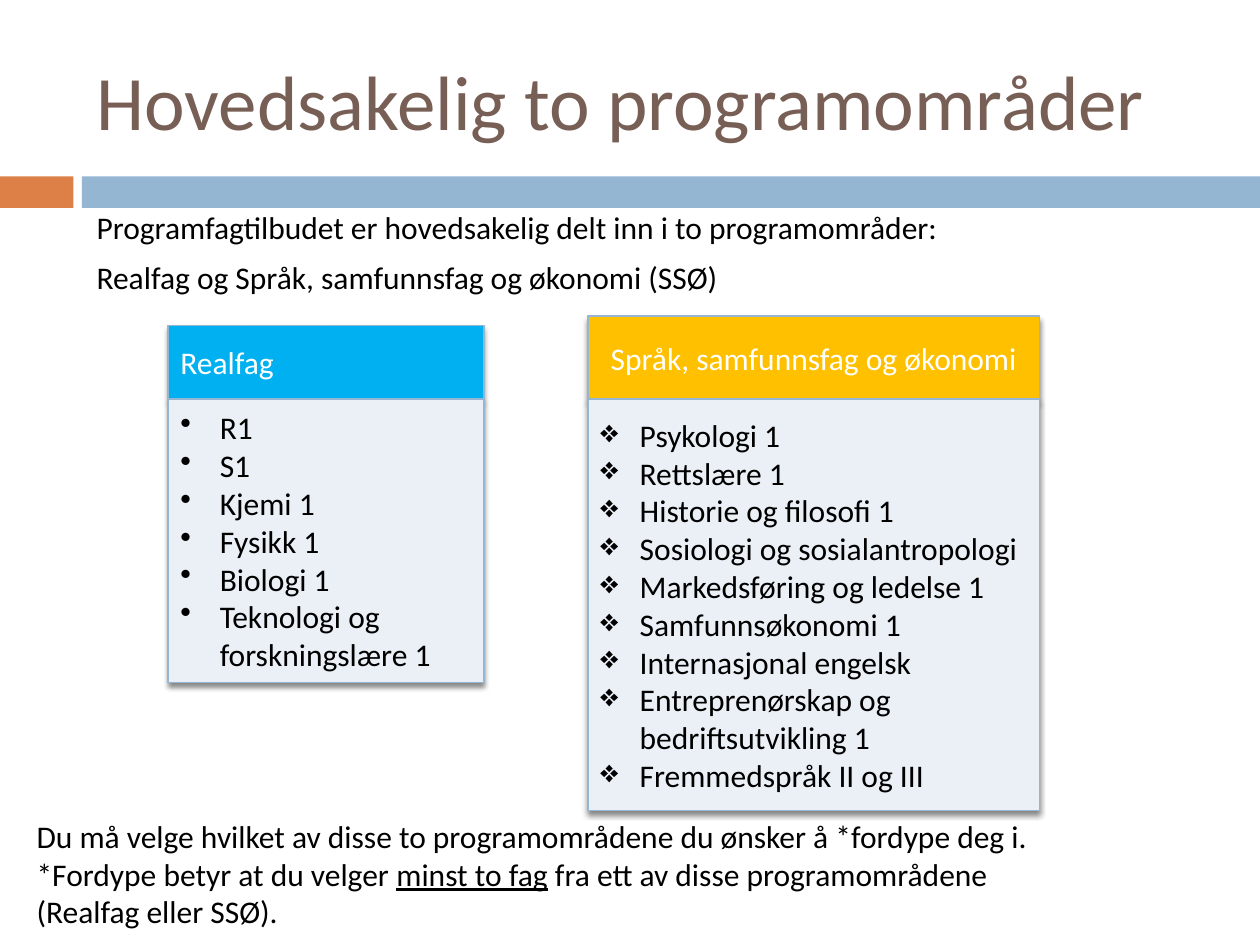
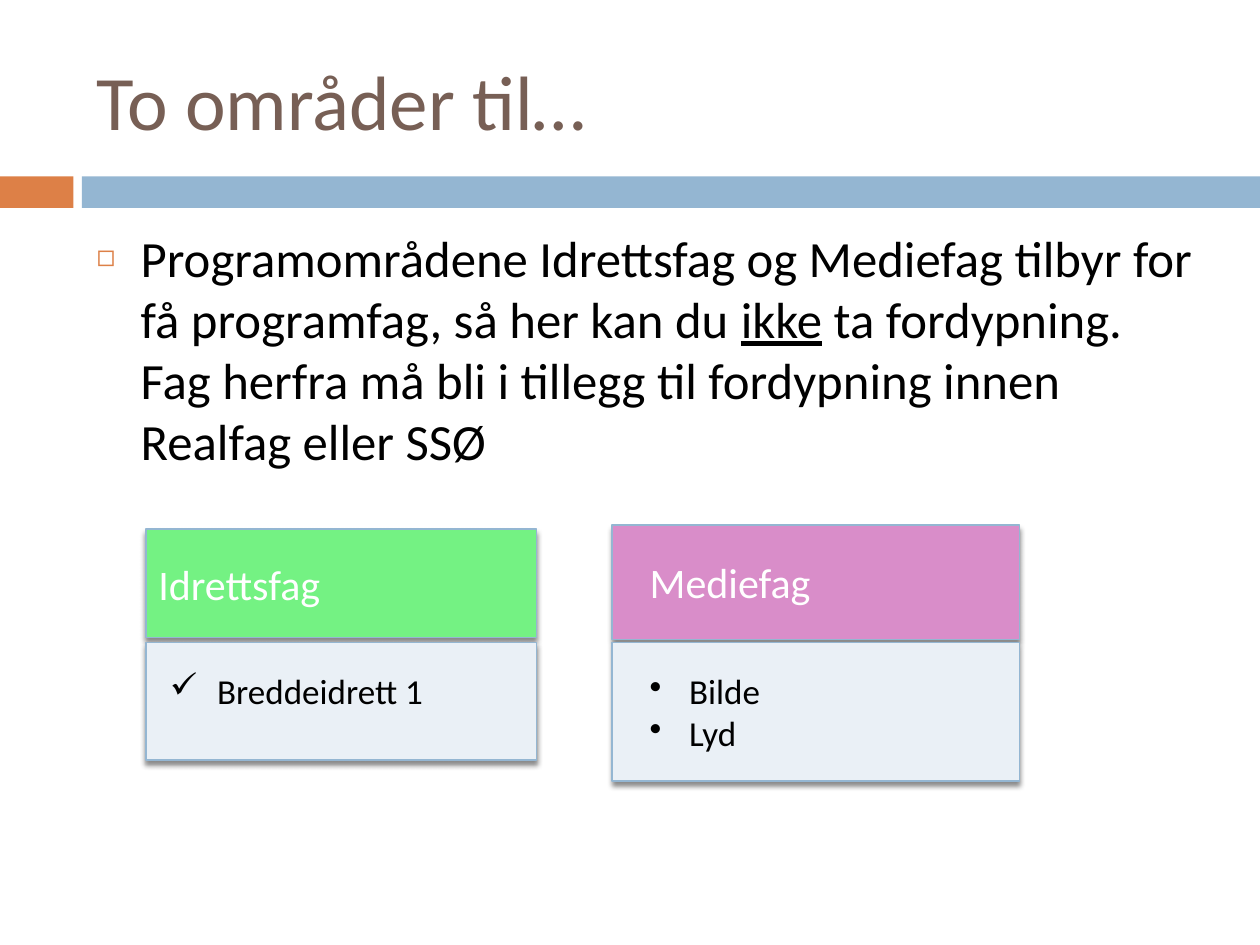
from dataclasses import dataclass

from lxml import etree
from pptx import Presentation
from pptx import util as u
from pptx.dml.color import RGBColor
from pptx.enum import shapes, text
from pptx.oxml import ns


@dataclass(frozen=True)
class Theme:
    font: str = "Calibri"
    heading: str = "775F55"
    ink: str = "000000"
    light: str = "FFFFFF"
    accent: str = "DD8047"
    band: str = "94B6D2"
    panel: str = "EAF0F6"
    realfag: str = "00B0F0"
    sso: str = "FFC000"
    idrett: str = "74F283"
    medie: str = "D98DC9"
    title_size: int = 44
    lead_size: int = 29
    card_size: int = 24
    item_size: int = 20
    text_size: int = 18
    line_width: float = 0.79


@dataclass(frozen=True)
class Bullet:
    char: str
    indent: float = 3.75
    color: str = ""
    percent: int = 100


COLUMNS, ROWS = 120, 90
TITLE_AREA = (8, 3, 107, 13)
BAND_TOP, BAND_HEIGHT = 16.8, 3


def add_xml(parent, tag, **attributes):
    child = etree.SubElement(parent, ns.qn(tag))
    for name, value in attributes.items():
        child.set(name, str(value))
    return child


class Deck:
    """Holds the theme and the current slide; areas are (column, row, columns, rows)."""

    def __init__(self, theme):
        self.theme = theme
        self.show = Presentation()
        self.show.slide_width, self.show.slide_height = u.Inches(10), u.Inches(7.5)
        self.cell_width = self.show.slide_width / COLUMNS
        self.cell_height = self.show.slide_height / ROWS
        self.layout = self.show.slide_layouts[1]
        self.slide = None

    def place(self, area):
        column, row, columns, rows = area
        return (int(column * self.cell_width), int(row * self.cell_height),
                int(columns * self.cell_width), int(rows * self.cell_height))

    def new_slide(self, heading):
        first = self.slide is None
        self.slide = self.show.slides.add_slide(self.layout)
        if first:
            self.share_bands()
        title = self.slide.shapes.title
        self.move(title, TITLE_AREA)
        self.set_text(title, [heading], self.theme.title_size, self.theme.heading)

    def share_bands(self):
        """Put the two bands on the layout, so that every slide shows them."""
        bands = ((0, 7, self.theme.accent), (7.8, 112.2, self.theme.band))
        for column, columns, color in bands:
            band = self.box((column, BAND_TOP, columns, BAND_HEIGHT), color)
            band.line.fill.background()
            self.layout.shapes.element.append(band.element)

    def move(self, placeholder, area):
        (placeholder.left, placeholder.top,
         placeholder.width, placeholder.height) = self.place(area)

    def body(self, area, paragraphs, size, bullet=None):
        body = self.slide.placeholders[1]
        self.move(body, area)
        self.set_text(body, paragraphs, size, self.theme.ink, bullet, before=7,
                      anchor=text.MSO_ANCHOR.TOP)

    def box(self, area, color):
        box = self.slide.shapes.add_shape(shapes.MSO_SHAPE.RECTANGLE, *self.place(area))
        box.shadow.inherit = False
        box.fill.solid()
        box.fill.fore_color.rgb = RGBColor.from_string(color)
        return box

    def panel(self, area, color):
        """Add an outlined box with a soft shadow below it."""
        panel = self.box(area, color)
        panel.line.color.rgb = RGBColor.from_string(self.theme.band)
        panel.line.width = u.Pt(self.theme.line_width)
        effects = panel.element.spPr.find(ns.qn("a:effectLst"))
        shadow = add_xml(effects, "a:outerShdw", blurRad=u.Pt(3), dist=u.Pt(2.4),
                         dir=90 * 60000, rotWithShape=0)
        shade = add_xml(shadow, "a:srgbClr", val=self.theme.ink)
        add_xml(shade, "a:alpha", val=45000)
        return panel

    def header(self, area, color, label, size, align=text.PP_ALIGN.LEFT):
        self.set_text(self.panel(area, color), [label], size, self.theme.light, align=align)

    def listing(self, area, items, bullet):
        self.set_text(self.panel(area, self.theme.panel), items, self.theme.text_size,
                      self.theme.ink, bullet)

    def label(self, area, paragraphs, size, color, bullet=None):
        label = self.slide.shapes.add_textbox(*self.place(area))
        self.set_text(label, paragraphs, size, color, bullet, anchor=text.MSO_ANCHOR.TOP)

    def set_text(self, shape, paragraphs, size, color, bullet=None, before=0,
                 align=text.PP_ALIGN.LEFT, anchor=text.MSO_ANCHOR.MIDDLE):
        """Fill the shape with paragraphs; words between underscores are underlined."""
        frame = shape.text_frame
        frame.word_wrap = True
        frame.auto_size = text.MSO_AUTO_SIZE.NONE
        frame.vertical_anchor = anchor
        frame.text = "\n".join(wording.split("_")[0] for wording in paragraphs)
        for paragraph, wording in zip(frame.paragraphs, paragraphs):
            for part in wording.split("_")[1:]:
                paragraph.add_run().text = part
            paragraph.alignment = align
            paragraph.space_before = u.Pt(before)
            self.mark(paragraph, bullet)
            for number, run in enumerate(paragraph.runs):
                run.font.name = self.theme.font
                run.font.size = u.Pt(size)
                run.font.color.rgb = RGBColor.from_string(color)
                if number % 2:
                    run.font.underline = True

    def mark(self, paragraph, bullet):
        properties = paragraph._p.get_or_add_pPr()
        indent = int(bullet.indent * self.cell_width) if bullet else 0
        properties.set("marL", str(indent))
        properties.set("indent", str(-indent))
        if not bullet:
            add_xml(properties, "a:buNone")
            return
        if bullet.color:
            add_xml(add_xml(properties, "a:buClr"), "a:srgbClr", val=bullet.color)
        add_xml(properties, "a:buSzPct", val=bullet.percent * 1000)
        add_xml(properties, "a:buChar", char=bullet.char)


def main_areas(deck):
    theme = deck.theme
    deck.new_slide("Hovedsakelig to programområder")
    deck.body((8, 19.2, 107, 60.7), [
        "Programfagtilbudet er hovedsakelig delt inn i to programområder:",
        "Realfag og Språk, samfunnsfag og økonomi (SSØ)"], theme.text_size)

    deck.header((16, 31, 30.1, 7), theme.realfag, "Realfag", theme.text_size)
    deck.listing((16, 38, 30.1, 27), [
        "R1", "S1", "Kjemi 1", "Fysikk 1", "Biologi 1",
        "Teknologi og forskningslære 1"], Bullet("•"))

    deck.header((56, 30.1, 43, 7.9), theme.sso, "Språk, samfunnsfag og økonomi",
                theme.text_size, text.PP_ALIGN.CENTER)
    deck.listing((56, 38, 43, 39.2), [
        "Psykologi 1", "Rettslære 1", "Historie og filosofi 1",
        "Sosiologi og sosialantropologi", "Markedsføring og ledelse 1",
        "Samfunnsøkonomi 1", "Internasjonal engelsk",
        "Entreprenørskap og bedriftsutvikling 1", "Fremmedspråk II og III"], Bullet("❖"))

    deck.label((2.3, 77.2, 100, 12.1), [
        "Du må velge hvilket av disse to programområdene du ønsker å *fordype deg i.",
        "*Fordype betyr at du velger _minst to fag_ fra ett av disse programområdene "
        "(Realfag eller SSØ)."], theme.text_size, theme.ink)


def further_areas(deck):
    theme = deck.theme
    deck.new_slide("To områder til…")
    deck.body((8, 21, 107, 59), [
        "Programområdene Idrettsfag og Mediefag tilbyr for få programfag, så her kan du "
        "_ikke_ ta fordypning. Fag herfra må bli i tillegg til fordypning innen "
        "Realfag eller SSØ"], theme.lead_size, Bullet("◻", 4.2, theme.accent, 60))

    deck.header((13.9, 50.4, 37.2, 10.3), theme.idrett, "Idrettsfag", theme.card_size)
    deck.panel((13.9, 61.2, 37.2, 11.2), theme.panel)
    deck.label((15, 63.2, 28.4, 5.3), ["Breddeidrett 1"], theme.item_size, theme.ink,
               Bullet("✓", 4.5))

    deck.panel((58.3, 50, 38.8, 10.9), theme.medie)
    deck.label((60.7, 52.4, 32.2, 6), ["Mediefag"], theme.card_size, theme.light)
    deck.panel((58.3, 61.2, 38.8, 13.2), theme.panel)
    deck.label((60.7, 63.2, 32.2, 9.2), ["Bilde", "Lyd"], theme.item_size, theme.ink,
               Bullet("•"))


def main():
    deck = Deck(Theme())
    main_areas(deck)
    further_areas(deck)
    deck.show.save("out.pptx")


if __name__ == "__main__":
    main()
